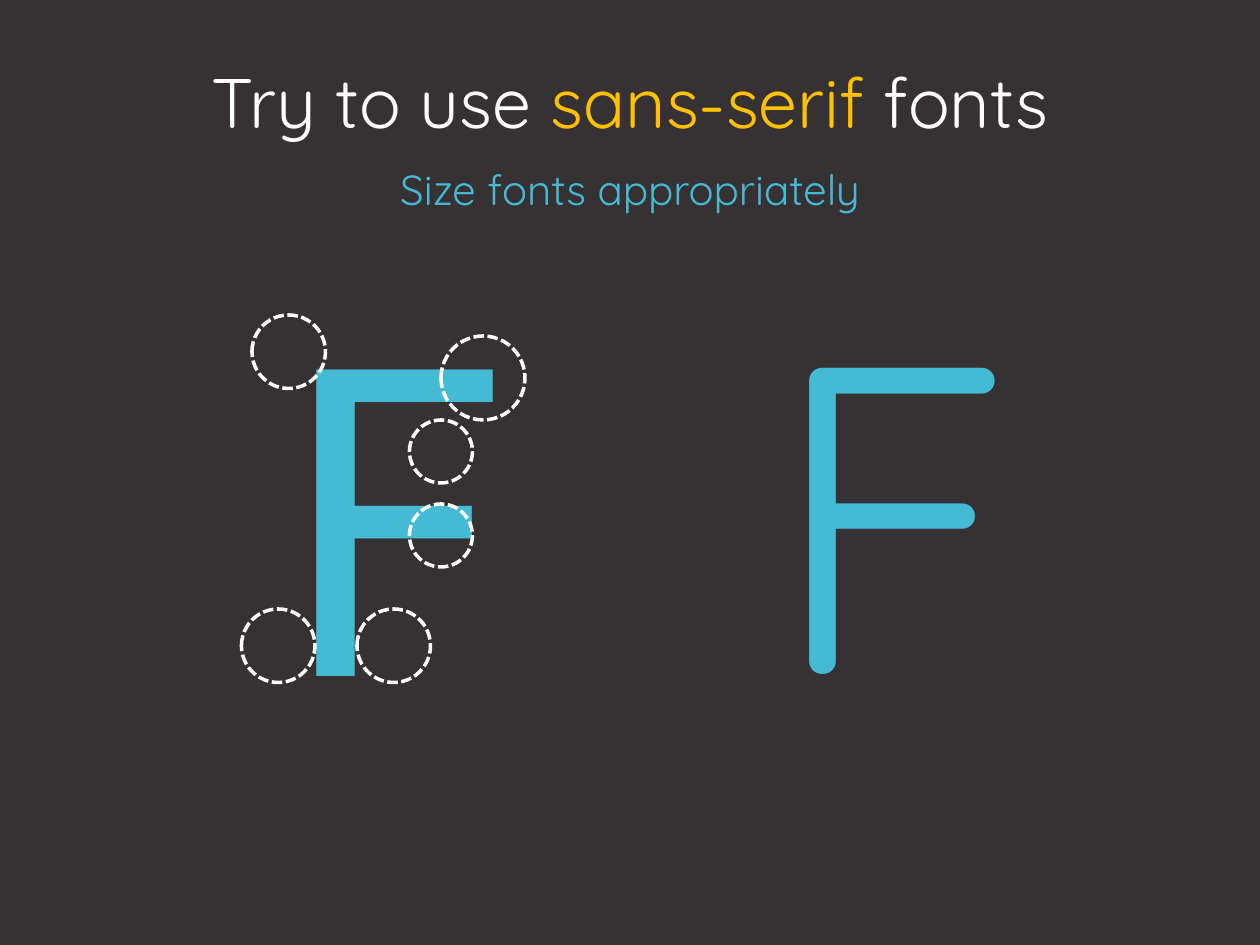
"""Build a slide that contrasts serif corners with a rounded sans-serif letter."""
from dataclasses import dataclass

import pptx
import pptx.dml.color
import pptx.enum.dml
import pptx.enum.shapes
import pptx.enum.text
import pptx.util

RGBColor = pptx.dml.color.RGBColor
PP_ALIGN = pptx.enum.text.PP_ALIGN

DARK = RGBColor(0x36, 0x31, 0x32)
WHITE = RGBColor(0xFF, 0xFF, 0xFF)
AMBER = RGBColor(0xFF, 0xC0, 0x00)
AQUA = RGBColor(0x45, 0xBA, 0xD5)

WIDTH, HEIGHT = pptx.util.Inches(10), pptx.util.Inches(7.5)
COLUMNS, ROWS = 120, 90
ROUNDED = "Quicksand"
PLAIN = "Noto Sans CJK SC"


@dataclass(frozen=True)
class Area:
    column: float
    row: float
    columns: float
    rows: float

    def lengths(self) -> tuple[int, int, int, int]:
        """Return left, top, width and height on the slide."""
        return (
            round(self.column * WIDTH / COLUMNS),
            round(self.row * HEIGHT / ROWS),
            round(self.columns * WIDTH / COLUMNS),
            round(self.rows * HEIGHT / ROWS),
        )


@dataclass(frozen=True)
class Label:
    area: Area
    spans: tuple[tuple[str, RGBColor], ...]
    size: int
    font: str
    align: PP_ALIGN


@dataclass(frozen=True)
class Ring:
    column: int
    row: int
    diameter: int


LABELS = (
    Label(
        Area(0, 5, 120, 10),
        (("Try to use ", WHITE), ("sans-serif", AMBER), (" fonts", WHITE)),
        40, ROUNDED, PP_ALIGN.CENTER,
    ),
    Label(Area(0, 15, 120, 6), (("Size fonts appropriately", AQUA),), 24, ROUNDED, PP_ALIGN.CENTER),
    Label(Area(72, 22, 24, 51.7), (("F", AQUA),), 250, ROUNDED, PP_ALIGN.LEFT),
    Label(Area(25, 24, 24, 49.4), (("F", AQUA),), 239, PLAIN, PP_ALIGN.LEFT),
)

RINGS = (
    Ring(42, 32, 8),
    Ring(24, 30, 7),
    Ring(23, 58, 7),
    Ring(34, 58, 7),
    Ring(39, 48, 6),
    Ring(39, 40, 6),
)


def apply_format(target: object, values: dict[str, object]) -> None:
    """Set each named attribute of the target."""
    for name, value in values.items():
        setattr(target, name, value)


def draw_label(page: pptx.slide.Slide, label: Label) -> None:
    """Add a text box with one paragraph of coloured spans."""
    box = page.shapes.add_textbox(*label.area.lengths())
    box.text_frame.word_wrap = True
    para = box.text_frame.paragraphs[0]
    para.alignment = label.align
    for text, color in label.spans:
        span = para.add_run()
        span.text = text
        apply_format(span.font, {"name": label.font, "size": pptx.util.Pt(label.size)})
        span.font.color.rgb = color


def draw_ring(page: pptx.slide.Slide, ring: Ring) -> None:
    """Add a dashed, unfilled circle."""
    area = Area(ring.column, ring.row, ring.diameter, ring.diameter)
    circle = page.shapes.add_shape(pptx.enum.shapes.MSO_SHAPE.OVAL, *area.lengths())
    circle.shadow.inherit = False
    circle.fill.background()
    circle.line.color.rgb = WHITE
    apply_format(circle.line, {
        "width": pptx.util.Pt(2),
        "dash_style": pptx.enum.dml.MSO_LINE.SQUARE_DOT,
    })


def main() -> None:
    """Create and save the deck."""
    deck = pptx.Presentation()
    apply_format(deck, {"slide_width": WIDTH, "slide_height": HEIGHT})
    page = deck.slides.add_slide(deck.slide_layouts[6])
    page.background.fill.solid()
    page.background.fill.fore_color.rgb = DARK
    for label in LABELS:
        draw_label(page, label)
    for ring in RINGS:
        draw_ring(page, ring)
    deck.save("out.pptx")


if __name__ == "__main__":
    main()
